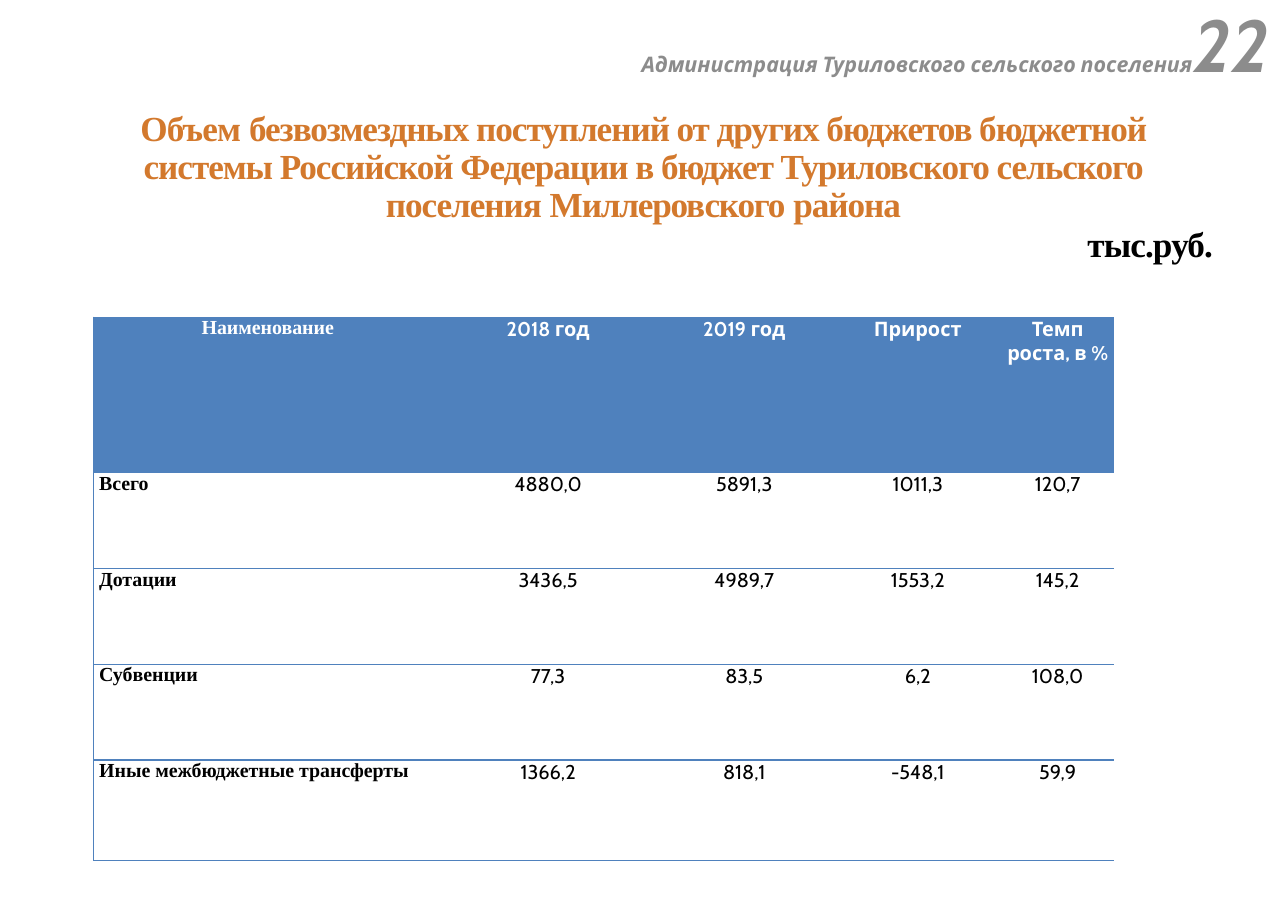
"""Build the slide on transfers to the Turilovskoe settlement budget."""
from dataclasses import dataclass

from lxml import etree
from pptx import Presentation
from pptx import util as u
from pptx.dml.color import RGBColor
from pptx.enum import text
from pptx.oxml.ns import qn

GRID_COLS, GRID_ROWS = 1169, 826
SLIDE_W, SLIDE_H = u.Inches(11.69), u.Inches(8.26)
COLORS = {"blue": "4F81BD", "orange": "D3792D", "gray": "8C8C8C",
          "black": "000000", "white": "FFFFFF"}
SERIF, SANS = "Times New Roman", "Cabin"
LEFT, CENTER, RIGHT = text.PP_ALIGN.LEFT, text.PP_ALIGN.CENTER, text.PP_ALIGN.RIGHT
TOP, BOTTOM = text.MSO_ANCHOR.TOP, text.MSO_ANCHOR.BOTTOM

TABLE_LEFT, TABLE_TOP = 85, 288
COL_SPANS = (316, 193, 163, 152, 102)
ROW_SPANS = (141, 87, 87, 87, 91)
TABLE_ROWS = (
    ("Наименование", "2018 год", "2019 год", "Прирост", "Темп роста, в %"),
    ("Всего", "4880,0", "5891,3", "1011,3", "120,7"),
    ("Дотации", "3436,5", "4989,7", "1553,2", "145,2"),
    ("Субвенции", "77,3", "83,5", "6,2", "108,0"),
    ("Иные межбюджетные трансферты", "1366,2", "818,1", "-548,1", "59,9"),
)


@dataclass(frozen=True)
class Run:
    text: str
    size: float
    font: str
    color: str
    bold: bool = True
    italic: bool = False
    spacing: float = 0


@dataclass(frozen=True)
class Label:
    col: int
    row: int
    cols: int
    rows: int
    runs: tuple[Run, ...]
    align: text.PP_ALIGN
    anchor: text.MSO_ANCHOR = TOP
    line_pt: float | None = None


def title_run(words: str, spacing: float, color: str = "orange") -> Run:
    return Run(words, 23, SERIF, color, spacing=spacing)


LABELS = (
    Label(79, 100, 1010, 105, (
        title_run("Объем ", -0.6),
        title_run("безвозмездных поступлений от других бюджетов бюджетной системы "
                  "Российской Федерации в бюджет Туриловского сельского поселения ", -0.7),
        title_run("Миллеровского ", -0.8),
        title_run("района", -0.7)), CENTER, line_pt=25),
    Label(987, 205, 140, 35, (title_run("тыс.руб.", -0.6, "black"),), LEFT, line_pt=25),
    Label(535, 22, 617, 57, (
        Run("Администрация Туриловского сельского поселения", 14, SANS, "gray", italic=True),
        Run("22", 48, SANS, "gray", italic=True)), RIGHT, BOTTOM),
)


def x(cols: int) -> int:
    return round(SLIDE_W * cols / GRID_COLS)


def y(rows: int) -> int:
    return round(SLIDE_H * rows / GRID_ROWS)


def add_run(p, run: Run) -> None:
    r = p.add_run()
    r.text = run.text
    r.font.size, r.font.name = u.Pt(run.size), run.font
    r.font.bold, r.font.italic = run.bold, run.italic
    r.font.color.rgb = RGBColor.from_string(COLORS[run.color])
    if run.spacing:
        r.font._element.set("spc", str(round(run.spacing * 100)))


def add_label(s, label: Label) -> None:
    sp = s.shapes.add_textbox(x(label.col), y(label.row), x(label.cols), y(label.rows))
    tf = sp.text_frame
    tf.word_wrap, tf.vertical_anchor = True, label.anchor
    tf.margin_left = tf.margin_top = tf.margin_right = tf.margin_bottom = 0
    p = tf.paragraphs[0]
    p.alignment = label.align
    if label.line_pt:
        p.line_spacing = u.Pt(label.line_pt)
    for run in label.runs:
        add_run(p, run)


def set_borders(cell, first_col: bool) -> None:
    props = cell._tc.get_or_add_tcPr()
    drawn = {"lnL": first_col, "lnR": False, "lnT": True, "lnB": True}
    for i, (tag, visible) in enumerate(drawn.items()):
        ln = etree.Element(qn(f"a:{tag}"), w=str(u.Pt(1)))
        fill = etree.SubElement(ln, qn("a:solidFill" if visible else "a:noFill"))
        if visible:
            etree.SubElement(fill, qn("a:srgbClr"), val=COLORS["blue"])
        props.insert(i, ln)


def fill_cell(cell, words: str, header: bool, first_col: bool) -> None:
    cell.margin_left = cell.margin_right = u.Inches(0.05)
    cell.margin_top = cell.margin_bottom = 0
    if header:
        cell.fill.solid()
        cell.fill.fore_color.rgb = RGBColor.from_string(COLORS["blue"])
    else:
        cell.fill.background()
    set_borders(cell, first_col)
    p = cell.text_frame.paragraphs[0]
    p.alignment = LEFT if first_col and not header else CENTER
    add_run(p, Run(words, 13, SERIF if first_col else SANS,
                   "white" if header else "black", bold=header or first_col))


def add_budget_table(s) -> None:
    frame = s.shapes.add_table(len(ROW_SPANS), len(COL_SPANS), x(TABLE_LEFT), y(TABLE_TOP),
                               x(sum(COL_SPANS)), y(sum(ROW_SPANS)))
    table = frame.table
    table.horz_banding = False
    for column, span in zip(table.columns, COL_SPANS):
        column.width = x(span)
    for i, (row, span, words) in enumerate(zip(table.rows, ROW_SPANS, TABLE_ROWS)):
        row.height = y(span)
        for j, (cell, word) in enumerate(zip(row.cells, words)):
            fill_cell(cell, word, header=i == 0, first_col=j == 0)


def main() -> None:
    prs = Presentation()
    prs.slide_width, prs.slide_height = SLIDE_W, SLIDE_H
    s = prs.slides.add_slide(prs.slide_layouts[6])
    add_budget_table(s)
    for label in LABELS:
        add_label(s, label)
    prs.save("out.pptx")


if __name__ == "__main__":
    main()
